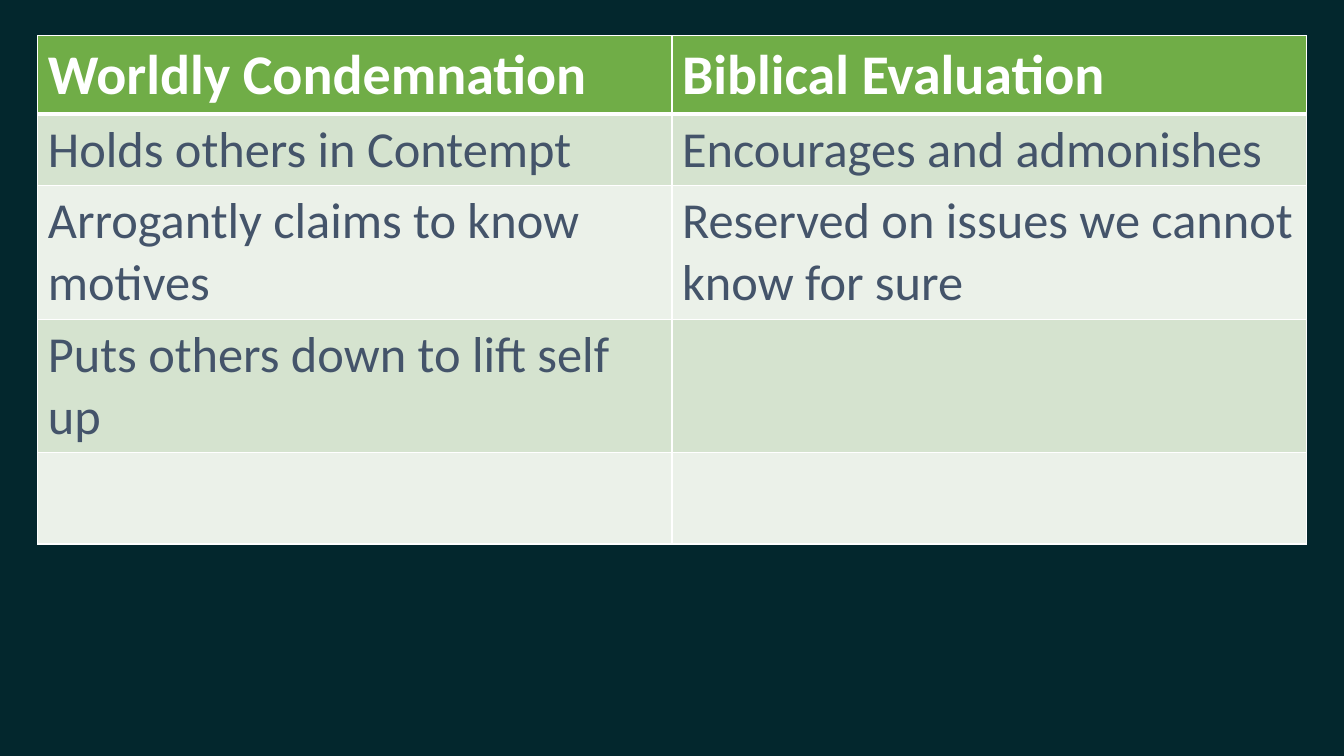
from lxml.etree import SubElement
from pptx import Presentation
from pptx.dml.color import RGBColor
from pptx.oxml.ns import qn
from pptx.util import Pt

PX = 9525  # EMU per px, 96 px to the inch
THEME = {
    "background": "03272D",
    "border": "FFFFFF",
    "header_fill": "70AD47",
    "band_fills": ("D5E3CF", "EBF1E9"),
    "header_font": {"name": "Calibri", "size": Pt(40), "bold": True},
    "header_color": "FFFFFF",
    "body_font": {"name": "Calibri", "size": Pt(36), "bold": False},
    "body_color": "44546A",
}
ROWS = [
    ("Worldly Condemnation", "Biblical Evaluation"),
    ("Holds others in Contempt", "Encourages and admonishes"),
    ("Arrogantly claims to know motives", "Reserved on issues we cannot know for sure"),
    ("Puts others down to lift self up", ""),
    ("", ""),
]
ROW_HEIGHTS = (64, 64, 87, 87, 87)
COLUMN_WIDTH = 604
LEFT, TOP = 36, 34


def add_border(cell, side, points):
    """Draw one side of a cell; side is L, R, T or B."""
    line = SubElement(cell._tc.get_or_add_tcPr(), qn(f"a:ln{side}"), w=str(Pt(points)))
    SubElement(SubElement(line, qn("a:solidFill")), qn("a:srgbClr"), val=THEME["border"])


presentation = Presentation()
presentation.slide_width = 1280 * PX
presentation.slide_height = 720 * PX
slide = presentation.slides.add_slide(presentation.slide_layouts[6])
slide.background.fill.solid()
slide.background.fill.fore_color.rgb = RGBColor.from_string(THEME["background"])

table = slide.shapes.add_table(
    len(ROWS), 2, LEFT * PX, TOP * PX, 2 * COLUMN_WIDTH * PX, sum(ROW_HEIGHTS) * PX
).table
for column in table.columns:
    column.width = COLUMN_WIDTH * PX

for row_index, (texts, height) in enumerate(zip(ROWS, ROW_HEIGHTS)):
    table.rows[row_index].height = height * PX
    is_header = row_index == 0
    role = "header" if is_header else "body"
    fill_color = THEME["header_fill"] if is_header else THEME["band_fills"][(row_index - 1) % 2]
    border_widths = {"L": 1, "R": 1, "T": 3 if row_index == 1 else 1, "B": 3 if is_header else 1}
    for column_index, text in enumerate(texts):
        cell = table.cell(row_index, column_index)
        for side, points in border_widths.items():
            add_border(cell, side, points)
        cell.fill.solid()
        cell.fill.fore_color.rgb = RGBColor.from_string(fill_color)
        if text:
            cell.text = text
            font = cell.text_frame.paragraphs[0].runs[0].font
            for name, value in THEME[f"{role}_font"].items():
                setattr(font, name, value)
            font.color.rgb = RGBColor.from_string(THEME[f"{role}_color"])

presentation.save("out.pptx")
